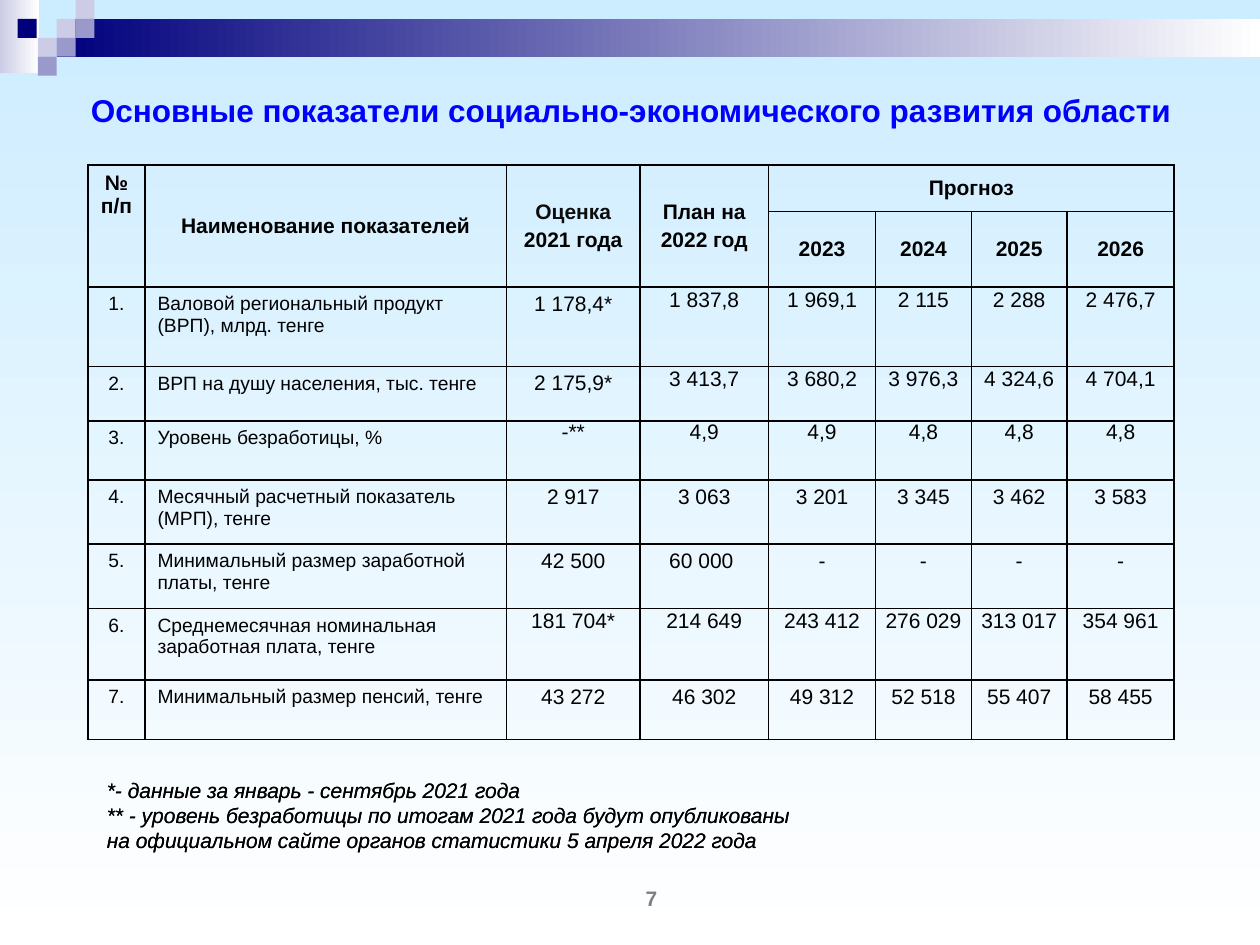
import pptx
import pptx.util
import pptx.dml.color
import pptx.enum.shapes
import pptx.enum.text
import pptx.oxml
import pptx.oxml.ns

Inches = pptx.util.Inches
Pt = pptx.util.Pt
ALIGN = pptx.enum.text.PP_ALIGN
ANCHOR = pptx.enum.text.MSO_ANCHOR

TITLE = "Основные показатели социально-экономического развития области"
NOTES = [
    "*- данные за январь - сентябрь 2021 года",
    "** - уровень безработицы по итогам 2021 года будут опубликованы",
    "на официальном сайте органов статистики 5 апреля 2022 года",
]
BARS = [
    (0, 0, 0.31, 0.58, "CCCCE6"),
    (0.45, 0.15, 9.55, 0.3, "00007D"),
]
TILE = 0.15
TILES = [
    (0.45, 0.15, "CCCCE6"),
    (0.6, 0, "CCCCE6"),
    (0.6, 0.15, "9999CC"),
    (0.3, 0.3, "CCCCE6"),
    (0.14, 0.15, "00007D"),
    (0.45, 0.3, "9999CC"),
    (0.3, 0.45, "9999CC"),
]
COLS = [0.45, 2.87, 1.06, 1.02, 0.85, 0.76, 0.76, 0.85]
ROWS = [0.37, 0.6, 0.63, 0.43, 0.47, 0.51, 0.51, 0.57, 0.47]
WIDE = (0.1, 0.05, 0.05)
MID = (0.08, 0.04, 0.04)
SLIM = (0.04, 0, 0)
TIGHT = (0.01, 0.01, 0)
HEADS = [
    ["№ п/п"],
    ["Наименование показателей"],
    ["Оценка", "2021 года"],
    ["План на", "2022 год"],
    ["Прогноз"],
]
YEARS = ["2023", "2024", "2025", "2026"]
DATA = [
    ("Валовой региональный продукт (ВРП), млрд. тенге", MID, TIGHT,
     ["1 178,4*", "1 837,8", "1 969,1", "2 115", "2 288", "2 476,7"]),
    ("ВРП на душу населения, тыс. тенге", MID, TIGHT,
     ["2 175,9*", "3 413,7", "3 680,2", "3 976,3", "4 324,6", "4 704,1"]),
    ("Уровень безработицы, %", SLIM, SLIM,
     ["-**", "4,9", "4,9", "4,8", "4,8", "4,8"]),
    ("Месячный расчетный показатель (МРП), тенге", MID, MID,
     ["2 917", "3 063", "3 201", "3 345", "3 462", "3 583"]),
    ("Минимальный размер заработной платы, тенге", MID, MID,
     ["42 500", "60 000 ", "-", "-", "-", "-"]),
    ("Среднемесячная номинальная заработная плата, тенге", TIGHT, TIGHT,
     ["181 704*", "214 649", "243 412", "276 029", "313 017", "354 961"]),
    ("Минимальный размер пенсий, тенге", MID, MID,
     ["43 272", "46 302", "49 312", "52 518", "55 407", "58 455"]),
]


def tint(code):
    return pptx.dml.color.RGBColor.from_string(code)


def blend(fill, start, angle):
    fill.gradient()
    fill.gradient_angle = angle
    for stop, code in zip(fill.gradient_stops, (start, "FFFFFF")):
        stop.color.rgb = tint(code)


def block(slide, left, top, width, height):
    box = slide.shapes.add_shape(
        pptx.enum.shapes.MSO_SHAPE.RECTANGLE,
        Inches(left), Inches(top), Inches(width), Inches(height))
    box.shadow.inherit = False
    box.line.fill.background()
    return box


def write(frame, lines, size, code="000000", bold=False, slant=False,
          align=ALIGN.CENTER, gap=0):
    for i, line in enumerate(lines):
        para = frame.add_paragraph() if i else frame.paragraphs[0]
        para.alignment = align
        para.space_before = Pt(gap)
        run = para.add_run()
        run.text = line
        font = run.font
        font.name, font.size = "Arial", Pt(size)
        font.bold, font.italic = bold, slant
        font.color.rgb = tint(code)


def label(slide, left, top, width, height, lines, size, **look):
    box = slide.shapes.add_textbox(
        Inches(left), Inches(top), Inches(width), Inches(height))
    box.text_frame.word_wrap = True
    write(box.text_frame, lines, size, **look)
    return box.text_frame


def edge(cell):
    props = cell._tc.get_or_add_tcPr()
    for i, side in enumerate(("lnL", "lnR", "lnT", "lnB")):
        props.insert(i, pptx.oxml.parse_xml(
            f'<a:{side} {pptx.oxml.ns.nsdecls("a")} w="12700"><a:solidFill>'
            f'<a:srgbClr val="000000"/></a:solidFill></a:{side}>'))


def put(cell, lines, pad, size=12, anchor=ANCHOR.TOP, **look):
    side, top, base = pad
    cell.margin_left = cell.margin_right = Inches(side)
    cell.margin_top, cell.margin_bottom = Inches(top), Inches(base)
    cell.vertical_anchor = anchor
    gap = size * 0.2 if pad in (WIDE, MID) else 0
    write(cell.text_frame, lines, size, gap=gap, **look)


def fill_table(slide):
    grid = slide.shapes.add_table(
        len(ROWS), len(COLS), Inches(0.7), Inches(1.31),
        Inches(sum(COLS)), Inches(sum(ROWS))).table
    grid.first_row = grid.horz_banding = False
    for col, width in zip(grid.columns, COLS):
        col.width = Inches(width)
    for row, height in zip(grid.rows, ROWS):
        row.height = Inches(height)
    for cell in grid.iter_cells():
        cell.fill.background()
        edge(cell)
    for c in range(4):
        grid.cell(0, c).merge(grid.cell(1, c))
    grid.cell(0, 4).merge(grid.cell(0, 7))
    for c, lines in enumerate(HEADS):
        put(grid.cell(0, c), lines, WIDE, bold=True,
            anchor=ANCHOR.MIDDLE if c else ANCHOR.TOP)
    grid.cell(0, 2).text_frame.paragraphs[0].runs[0].font.color.rgb = tint("0D0D0D")
    for c, year in enumerate(YEARS, 4):
        put(grid.cell(1, c), [year], WIDE, bold=True, anchor=ANCHOR.MIDDLE)
    for r, (name, first, rest, values) in enumerate(DATA, 2):
        put(grid.cell(r, 0), [f"{r - 1}."], WIDE, 11)
        put(grid.cell(r, 1), [name], WIDE, 11, align=ALIGN.LEFT)
        for c, value in enumerate(values, 2):
            put(grid.cell(r, c), [value], first if c == 2 else rest)


def main():
    deck = pptx.Presentation()
    deck.slide_width, deck.slide_height = Inches(10), Inches(7.5)
    slide = deck.slides.add_slide(deck.slide_layouts[6])
    blend(slide.background.fill, "CCECFF", 270)
    for *place, code in BARS:
        blend(block(slide, *place).fill, code, 0)
    for left, top, code in TILES:
        tile = block(slide, left, top, TILE, TILE)
        tile.fill.solid()
        tile.fill.fore_color.rgb = tint(code)
    page = label(slide, 4.17, 7.01, 2, 0.24, ["7"], 12, code="7F7F7F", bold=True)
    title = label(slide, 0.52, 0.68, 8.98, 0.39, [TITLE], 18, code="0000FF", bold=True)
    page.vertical_anchor = title.vertical_anchor = ANCHOR.MIDDLE
    fill_table(slide)
    for height in (0.91, 0.71):
        note = label(slide, 0.75, 6.12, 6.84, height, NOTES, 12,
                     slant=True, align=ALIGN.LEFT)
        note.auto_size = pptx.enum.text.MSO_AUTO_SIZE.SHAPE_TO_FIT_TEXT
    deck.save("out.pptx")


if __name__ == "__main__":
    main()
